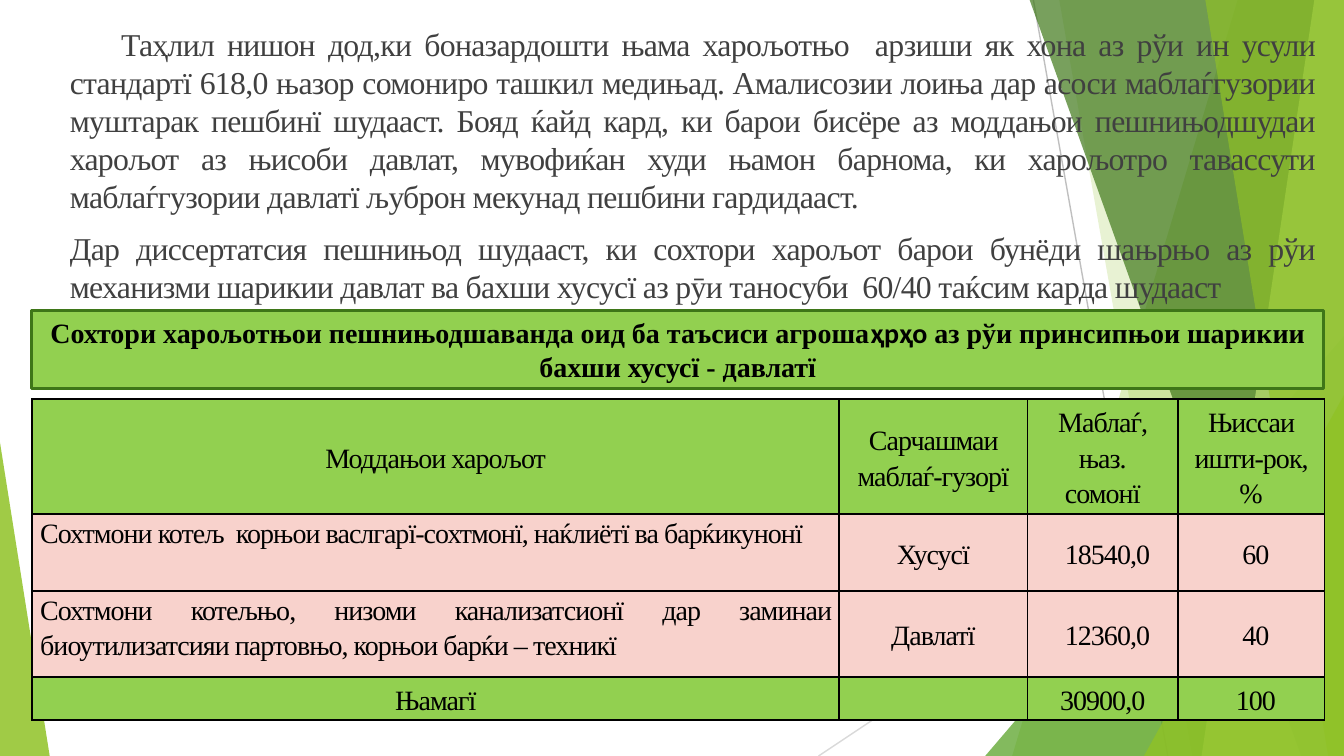
from lxml import etree
from pptx import Presentation
from pptx import util as u
from pptx.dml.color import RGBColor
from pptx.enum import shapes, text
from pptx.oxml.ns import qn

Cm, Pt = u.Cm, u.Pt
W, H = 25.4, 14.29
GREEN, PINK, BLACK = "92D050", "F8D2CC", "000000"
FONT = "Times New Roman"


def paint(fmt, color, alpha=100):
    """Give a fill or line fill a solid colour with opacity in percent."""
    fmt.solid()
    fmt.fore_color.rgb = RGBColor.from_string(color)
    if alpha < 100:
        clr = fmt._xPr.find(qn("a:solidFill"))[0]
        etree.SubElement(clr, qn("a:alpha"), val=str(alpha * 1000))


def style(r, color, spc=0, **font):
    for name, value in font.items():
        setattr(r.font, name, value)
    paint(r.font.fill, color)
    if spc:
        r._r.get_or_add_rPr().set("spc", str(spc))


prs = Presentation()
prs.slide_width, prs.slide_height = Cm(W), Cm(H)
s = prs.slides.add_slide(prs.slide_layouts[1])
tree = s.shapes._spTree
tree.remove(s.shapes.title._element)
body = s.placeholders[1]

# Background: two thin lines, then translucent facets
for x1, y1, x2, y2, color in [(19.53, 0, 22.07, H, "BFBFBF"),
                              (W, 7.67, 15.47, H, "D9D9D9")]:
    line = s.shapes.add_connector(shapes.MSO_CONNECTOR.STRAIGHT,
                                  Cm(x1), Cm(y1), Cm(x2), Cm(y2))
    line.line.width = Pt(0.75)
    paint(line.line.fill, color)
    etree.SubElement(line._element.spPr, qn("a:effectLst"))

# Bands run to the right edge: (top x, bottom x); triangles: (left, top, width, apex)
facets = [
    ((23.39, 19.13), "90C226", 30),
    ((20.02, 22.53), "90C226", 20),
    ((18.62, 6.35, 6.78, 1), "54A021", 72),
    ((19.46, 24.59), "3F7819", 70),
    ((24.84, 22.71), "C0E474", 70),
    ((22.78, 25.1), "90C226", 65),
    ((21.62, 7.47, 3.78, 1), "90C226", 80),
    ((0, 8.36, 0.94, 0), "90C226", 85),
]
for geometry, color, alpha in facets:
    if len(geometry) == 2:
        top, bottom = geometry
        fb = s.shapes.build_freeform(Cm(top), 0)
        fb.add_line_segments([(Cm(W), 0), (Cm(W), Cm(H)), (Cm(bottom), Cm(H))])
        sp = fb.convert_to_shape()
    else:
        x, y, width, apex = geometry
        sp = s.shapes.add_shape(shapes.MSO_SHAPE.ISOSCELES_TRIANGLE,
                                Cm(x), Cm(y), Cm(width), Cm(H - y))
        sp.adjustments[0] = apex
    sp.shadow.inherit = False
    paint(sp.fill, color, alpha)
    sp.line.fill.background()

# Body text, in front of the background
tree.append(body._element)
body.left, body.top, body.width, body.height = Cm(0.43), Cm(0.36), Cm(24.59), Cm(13.51)
tf = body.text_frame
frame = dict(margin_left=Cm(0.18), margin_right=Cm(0.18), margin_top=Cm(0.1),
             margin_bottom=Cm(0.1), word_wrap=True)
for name, value in frame.items():
    setattr(tf, name, value)
tf.auto_size = text.MSO_AUTO_SIZE.NONE
tf.vertical_anchor = text.MSO_ANCHOR.TOP
paragraphs = [
    ("Таҳлил нишон дод,ки боназардошти њама харољотњо  арзиши як хона аз рўи ин усули "
     "стандартї 618,0 њазор сомониро ташкил медињад. Амалисозии лоиња дар асоси "
     "маблаѓгузории муштарак пешбинї шудааст. Бояд ќайд кард, ки барои бисёре аз "
     "моддањои пешнињодшудаи харољот аз њисоби давлат, мувофиќан худи њамон барнома, "
     "ки харољотро тавассути маблаѓгузории давлатї љуброн мекунад пешбини гардидааст.",
     0.97),
    ("Дар диссертатсия пешнињод шудааст, ки сохтори харољот барои бунёди шањрњо аз рўи "
     "механизми шарикии давлат ва бахши хусусї аз рӯи таносуби  60/40 таќсим карда "
     "шудааст", 0),
]
tf.text = "\n".join(words for words, indent in paragraphs)
for p, (words, indent) in zip(tf.paragraphs, paragraphs):
    p.alignment = text.PP_ALIGN.JUSTIFY
    p.space_before = Pt(7.5)
    p.line_spacing = 1.0
    pPr = p._p.get_or_add_pPr()
    pPr.set("marL", str(Cm(0.71)))
    pPr.set("indent", str(Cm(indent)))
    etree.SubElement(pPr, qn("a:buNone"))
    style(p.runs[0], "404040", -40, name=FONT, size=Pt(17))

# Cost table
rows = [
    ["Моддањои харољот", "Сарчашмаи маблаѓ-гузорї", "Маблаѓ, њаз.\nсомонї",
     "Њиссаи ишти-рок, %"],
    ["Сохтмони котељ  корњои васлгарї-сохтмонї, наќлиётї ва барќикунонї",
     "Хусусї", "18540,0", "60"],
    ["Сохтмони котељњо, низоми канализатсионї дар заминаи биоутилизатсияи партовњо, "
     "корњои барќи – техникї", "Давлатї", "12360,0", "40"],
    ["Њамагї", "", "30900,0", "100"],
]
table = s.shapes.add_table(4, 4, Cm(0.61), Cm(7.54), Cm(24.42), Cm(6.07)).table
for col, width in zip(table.columns, [15.25, 3.56, 2.84, 2.77]):
    col.width = Cm(width)
for row, height in zip(table.rows, [2.18, 1.45, 1.63, 0.81]):
    row.height = Cm(height)
for i, row in enumerate(rows):
    for j, words in enumerate(row):
        cell = table.cell(i, j)
        item = j == 0 and i in (1, 2)
        cell.text = words
        cell.margin_left = cell.margin_right = Cm(0.15)
        cell.margin_top = cell.margin_bottom = 0
        cell.vertical_anchor = text.MSO_ANCHOR.TOP if item else text.MSO_ANCHOR.MIDDLE
        for p in cell.text_frame.paragraphs:
            p.alignment = text.PP_ALIGN.JUSTIFY if item else text.PP_ALIGN.CENTER
            p.line_spacing = 1.15
            if i and j > 1 and (i, j) != (3, 2):
                p._p.get_or_add_pPr().set("marL", str(Cm(0.18)))
            for r in p.runs:
                style(r, BLACK, -50, name=FONT, size=Pt(15), bold=False)
        tcPr = cell._tc.get_or_add_tcPr()
        for side in ("a:lnL", "a:lnR", "a:lnT", "a:lnB"):
            ln = etree.SubElement(tcPr, qn(side), w=str(Pt(1)))
            fill = etree.SubElement(ln, qn("a:solidFill"))
            etree.SubElement(fill, qn("a:srgbClr"), val=BLACK)
        paint(cell.fill, PINK if i in (1, 2) else GREEN)

# Table heading
banner = s.shapes.add_shape(shapes.MSO_SHAPE.RECTANGLE,
                            Cm(0.6), Cm(5.87), Cm(24.42), Cm(1.47))
banner.shadow.inherit = False
paint(banner.fill, GREEN)
paint(banner.line.fill, "3E7618")
banner.line.width = Pt(1.5)
tf = banner.text_frame
for name, value in frame.items():
    setattr(tf, name, value)
tf.vertical_anchor = text.MSO_ANCHOR.MIDDLE
p = tf.paragraphs[0]
p.alignment = text.PP_ALIGN.CENTER
for words, font in [("Сохтори харољотњои пешнињодшаванда оид ба таъсиси агроша", FONT),
                    ("ҳрҳо", "Calibri"),
                    (" аз рўи принсипњои шарикии бахши хусусї - давлатї", FONT)]:
    r = p.add_run()
    r.text = words
    style(r, BLACK, name=font, size=Pt(15), bold=True)

prs.save("out.pptx")
